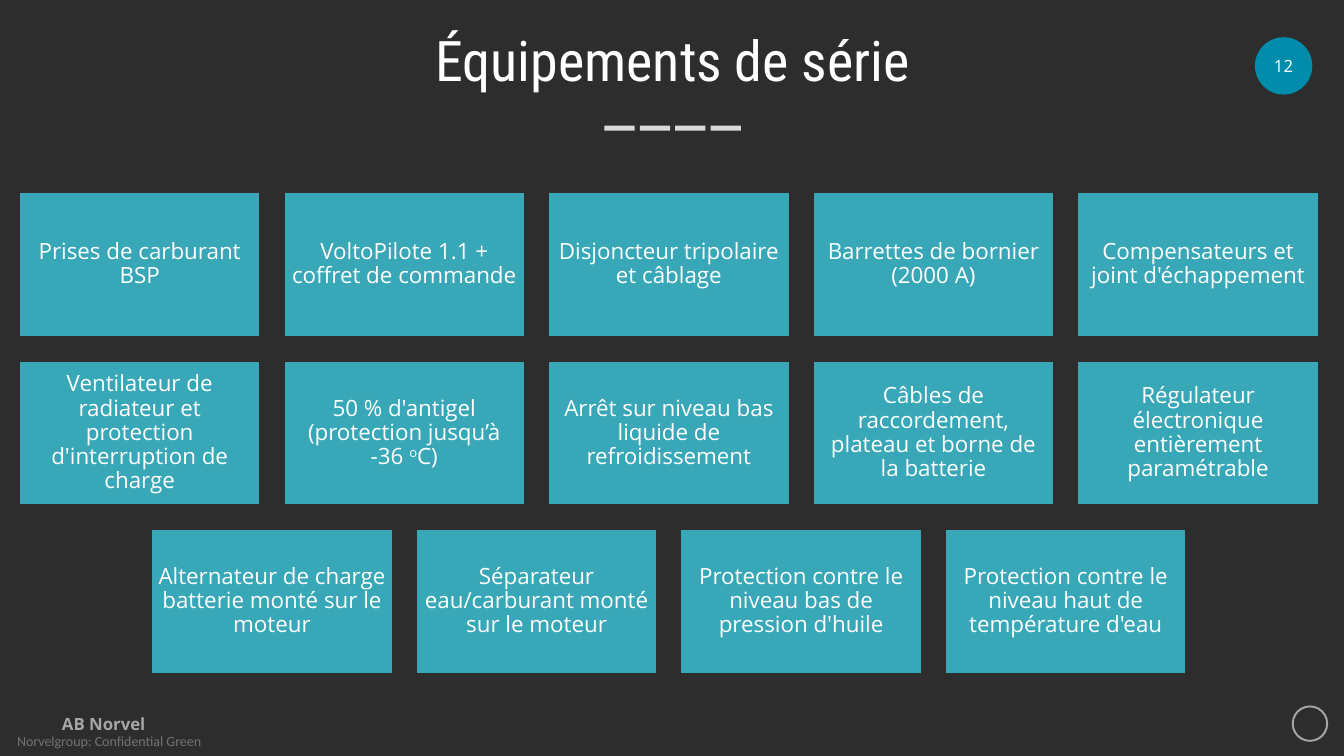
import pptx
import pptx.util
import pptx.dml.color
import pptx.enum.shapes
import pptx.enum.text

Pt = pptx.util.Pt
SHAPE = pptx.enum.shapes.MSO_SHAPE
ALIGN = pptx.enum.text.PP_ALIGN
ANCHOR = pptx.enum.text.MSO_ANCHOR

WHITE = "FFFFFF"
BACK = "2D2D2D"
GREY = "A6A6A6"
TEAL = "38A7B7"

ROWS = [
    ["Prises de carburant BSP", "VoltoPilote 1.1 + coffret de commande",
     "Disjoncteur tripolaire et câblage", "Barrettes de bornier (2000 A)",
     "Compensateurs et joint d'échappement"],
    ["Ventilateur de radiateur et protection d'interruption de charge",
     ["50 % d'antigel (protection jusqu’à -36 ", ("o", 30), "C)"],
     "Arrêt sur niveau bas liquide de refroidissement",
     "Câbles de raccordement, plateau et borne de la batterie",
     "Régulateur électronique entièrement paramétrable"],
    ["Alternateur de charge batterie monté sur le moteur",
     "Séparateur eau/carburant monté sur le moteur",
     "Protection contre le niveau bas de pression d'huile",
     "Protection contre le niveau haut de température d'eau"],
]


def color(code):
    return pptx.dml.color.RGBColor.from_string(code)


def write(shape, text, size=16, font="Open Sans", fill=WHITE, bold=False,
          align=ALIGN.CENTER, anchor=ANCHOR.MIDDLE, inset=0, space=None, wrap=True):
    """Fill a shape with one paragraph; a (text, percent) part is raised."""
    frame = shape.text_frame
    frame.word_wrap = wrap
    frame.vertical_anchor = anchor
    frame.margin_left = frame.margin_right = Pt(inset)
    frame.margin_top = frame.margin_bottom = Pt(inset)
    para = frame.paragraphs[0]
    para.alignment = align
    if space:
        para.line_spacing = space
    for part in [text] if isinstance(text, str) else text:
        words, rise = (part, 0) if isinstance(part, str) else part
        run = para.add_run()
        run.text = words
        run.font.size = Pt(size)
        run.font.name = font
        run.font.bold = bold
        run.font.color.rgb = color(fill)
        if rise:
            run.font._element.set("baseline", str(rise * 1000))


def label(slide, box, text, **style):
    write(slide.shapes.add_textbox(*map(Pt, box)), text, **style)


def block(slide, kind, box, fill=None, line=None, width=1):
    shape = slide.shapes.add_shape(kind, *map(Pt, box))
    shape.shadow.inherit = False
    if fill:
        shape.fill.solid()
        shape.fill.fore_color.rgb = color(fill)
    else:
        shape.fill.background()
    if line:
        shape.line.color.rgb = color(line)
        shape.line.width = Pt(width)
    else:
        shape.line.fill.background()
    return shape


def header(slide, left, top, width, height):
    label(slide, (left, top, width, height), "Équipements de série",
          size=40, font="Roboto Condensed", space=0.9)
    dash, pitch, count = 21.6, 25.3, 4
    start = left + (width - pitch * (count - 1) - dash) / 2
    for i in range(count):
        block(slide, SHAPE.RECTANGLE, (start + i * pitch, top + 64.8, dash, 3.6), "D9D9D9")


def badge(slide, left, top, size):
    disc = block(slide, SHAPE.OVAL, (left, top, size, size), "008CAA")
    write(disc, "12", size=12)


def cards(slide, left, top, width, height):
    """Place the rows of cards, each row centred in the box."""
    wide, high, gap = 172, 103, 17
    step = (height - high) / (len(ROWS) - 1)
    for i, row in enumerate(ROWS):
        start = left + (width - len(row) * (wide + gap) + gap) / 2
        for j, text in enumerate(row):
            box = (start + j * (wide + gap), top + i * step, wide, high)
            card = block(slide, SHAPE.RECTANGLE, box, TEAL, BACK)
            write(card, text, inset=4.8, space=0.9)


def footer(slide, left, top, width, height):
    label(slide, (left + 37.4, top, 73.4, 21.6), "AB Norvel", size=12, fill=GREY,
          bold=True, anchor=ANCHOR.TOP, inset=3.6, wrap=False)
    label(slide, (left + 12.2, top + 13, 148, 20.8), "Norvelgroup: Confidential Green",
          size=10, font="Calibri", fill="737373", align=ALIGN.LEFT)
    ring = 24.6
    block(slide, SHAPE.OVAL, (left + width - ring - 12, top - 1.4, ring, ring),
          line=GREY, width=1.4)


def main():
    deck = pptx.Presentation()
    deck.slide_width, deck.slide_height = Pt(960), Pt(540)
    slide = deck.slides.add_slide(deck.slide_layouts[6])
    slide.background.fill.solid()
    slide.background.fill.fore_color.rgb = color(BACK)
    header(slide, 84.5, 25, 792, 40.3)
    badge(slide, 896.4, 26.6, 41)
    cards(slide, 13.8, 137.5, 928, 343.5)
    footer(slide, 0, 506, 960, 34)
    deck.save("out.pptx")


if __name__ == "__main__":
    main()
